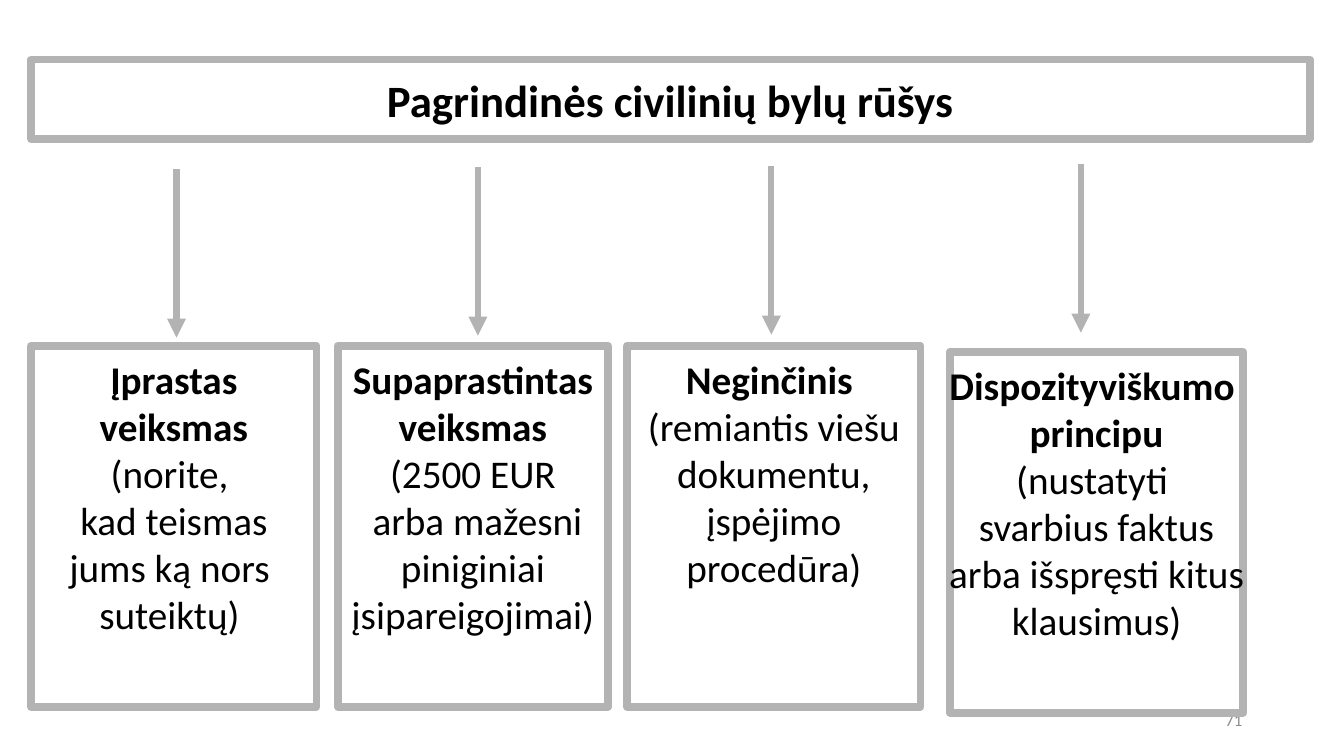
from dataclasses import dataclass

from lxml.etree import SubElement
from pptx import Presentation
from pptx.dml.color import RGBColor
from pptx.enum.shapes import MSO_CONNECTOR, MSO_SHAPE
from pptx.enum.text import MSO_ANCHOR, PP_ALIGN
from pptx.oxml.ns import qn
from pptx.slide import Slide
from pptx.text.text import TextFrame
from pptx.util import Inches, Pt

COLORS = {"line": "B3B3B3", "text": "000000", "page": "8B8B8B"}
FONT = "Calibri"
DROP = 1.67  # length of every arrow


@dataclass
class Case:
    left: float
    top: float
    width: float
    arrow_x: float
    arrow_y: float
    head: list[str]
    body: list[str]


CASES = [
    Case(0.31, 3.43, 2.83, 1.75, 1.68, ["Įprastas", "veiksmas"],
         ["(norite, ", "kad teismas", "jums ką nors ", "suteiktų) "]),
    Case(3.35, 3.43, 2.68, 4.74, 1.66, ["Supaprastintas", "veiksmas"],
         ["(2500 EUR", " arba mažesni", "piniginiai", "įsipareigojimai)"]),
    Case(6.22, 3.43, 2.91, 7.65, 1.65, ["Neginčinis "],
         ["(remiantis viešu", "dokumentu,", "įspėjimo", "procedūra)"]),
    Case(9.42, 3.49, 2.91, 10.72, 1.63, ["Dispozityviškumo ", "principu"],
         ["(nustatyti ", "svarbius faktus", "arba išspręsti kitus", "klausimus)"]),
]


def color(name: str) -> RGBColor:
    return RGBColor.from_string(COLORS[name])


def write(frame: TextFrame, text: str, *, size: float, bold: bool = False,
          tint: str = "text", align: PP_ALIGN = PP_ALIGN.CENTER) -> None:
    """Fill the first paragraph if it is empty, else add a new one."""
    first = frame.paragraphs[0]
    para = frame.add_paragraph() if first.runs else first
    para.alignment = align
    run = para.add_run()
    run.text = text
    run.font.name = FONT
    run.font.size = Pt(size)
    run.font.bold = bold
    run.font.color.rgb = color(tint)


def add_box(slide: Slide, left: float, top: float, width: float, height: float,
            anchor: MSO_ANCHOR) -> TextFrame:
    box = slide.shapes.add_shape(MSO_SHAPE.RECTANGLE, Inches(left), Inches(top),
                                 Inches(width), Inches(height))
    box.shadow.inherit = False
    box.fill.background()
    box.line.color.rgb = color("line")
    box.line.width = Pt(5.67)
    frame = box.text_frame
    frame.word_wrap = False
    frame.vertical_anchor = anchor
    frame.margin_left = frame.margin_right = Inches(0.14)
    frame.margin_top = frame.margin_bottom = Inches(0.09)
    return frame


def add_arrow(slide: Slide, x: float, y: float) -> None:
    arrow = slide.shapes.add_connector(MSO_CONNECTOR.STRAIGHT, Inches(x), Inches(y),
                                       Inches(x), Inches(y + DROP))
    arrow.line.color.rgb = color("line")
    arrow.line.width = Pt(4.5)
    SubElement(arrow.line._get_or_add_ln(), qn("a:tailEnd"), type="triangle")
    SubElement(arrow._element.spPr, qn("a:effectLst"))


def main() -> None:
    deck = Presentation()
    deck.slide_width, deck.slide_height = Inches(13.33), Inches(7.5)
    slide = deck.slides.add_slide(deck.slide_layouts[6])

    # Page number
    page = slide.shapes.add_textbox(Inches(9.42), Inches(6.95), Inches(3), Inches(0.39))
    page.text_frame.word_wrap = True
    page.text_frame.vertical_anchor = MSO_ANCHOR.MIDDLE
    write(page.text_frame, "71", size=12, tint="page", align=PP_ALIGN.RIGHT)

    # Title bar
    title = add_box(slide, 0.31, 0.59, 12.68, 0.79, MSO_ANCHOR.MIDDLE)
    write(title, "Pagrindinės civilinių bylų rūšys", size=32, bold=True)

    # Kinds of case, each below its arrow
    for case in CASES:
        add_arrow(slide, case.arrow_x, case.arrow_y)
        frame = add_box(slide, case.left, case.top, case.width, 3.58, MSO_ANCHOR.TOP)
        for text in case.head:
            write(frame, text, size=28, bold=True)
        for text in case.body:
            write(frame, text, size=28)

    deck.save("out.pptx")


if __name__ == "__main__":
    main()
